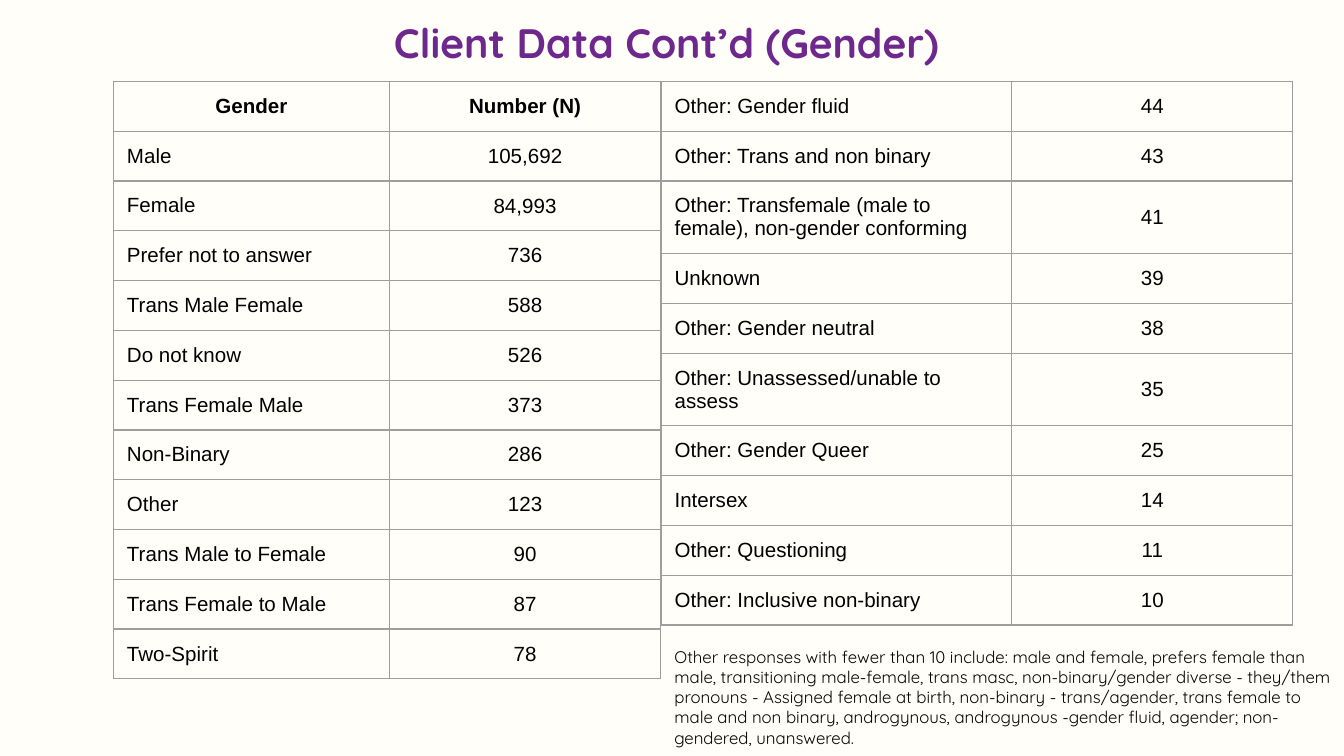
from lxml.etree import SubElement
from pptx import Presentation
from pptx.dml.color import RGBColor
from pptx.enum.text import MSO_ANCHOR, MSO_AUTO_SIZE, PP_ALIGN
from pptx.oxml.ns import qn
from pptx.util import Pt

TITLE = "Client Data Cont’d (Gender)"
HEADER = ("Gender", "Number (N)")
MAIN_ROWS = [
    HEADER,
    ("Male", "105,692"),
    ("Female", "84,993"),
    ("Prefer not to answer", "736"),
    ("Trans Male Female", "588"),
    ("Do not know", "526"),
    ("Trans Female Male", "373"),
    ("Non-Binary", "286"),
    ("Other", "123"),
    ("Trans Male to Female", "90"),
    ("Trans Female to Male", "87"),
    ("Two-Spirit", "78"),
]
OTHER_ROWS = [
    ("Other: Gender fluid", "44"),
    ("Other: Trans and non binary", "43"),
    ("Other: Transfemale (male to female), non-gender conforming", "41"),
    ("Unknown", "39"),
    ("Other: Gender neutral", "38"),
    ("Other: Unassessed/unable to assess", "35"),
    ("Other: Gender Queer", "25"),
    ("Intersex", "14"),
    ("Other: Questioning", "11"),
    ("Other: Inclusive non-binary", "10"),
]
NOTE = (
    "Other responses with fewer than 10 include: male and female, prefers female than male, "
    "transitioning male-female, trans masc, non-binary/gender diverse - they/them pronouns - "
    "Assigned female at birth, non-binary - trans/agender, trans female to male and non binary, "
    "androgynous, androgynous -gender fluid, agender; non-gendered, unanswered."
)

COLORS = {
    "background": "FFFEF9",
    "title": "6E288D",
    "cell": "000000",
    "note": "080404",
    "border": "9E9E9E",
}
INSET = Pt(7.2)
TABLE_TOP = 43.6
RIGHT_LEFT = 354.2


def set_insets(box):
    box.margin_left = box.margin_right = box.margin_top = box.margin_bottom = INSET


def format_text(text_frame, size, font_name, color, bold=False, alignment=PP_ALIGN.LEFT):
    for paragraph in text_frame.paragraphs:
        paragraph.alignment = alignment
        for run in paragraph.runs:
            run.font.size = Pt(size)
            run.font.name = font_name
            run.font.bold = bold
            run.font.color.rgb = RGBColor.from_string(COLORS[color])


def add_borders(cell):
    """Draw the four cell edges; they must precede the fill in the XML."""
    properties = cell._tc.get_or_add_tcPr()
    for side in ("lnL", "lnR", "lnT", "lnB"):
        line = SubElement(properties, qn(f"a:{side}"), w=str(Pt(0.75)))
        fill = SubElement(line, qn("a:solidFill"))
        SubElement(fill, qn("a:srgbClr"), val=COLORS["border"])


def add_gender_table(slide, rows, left, column_widths, row_height):
    """Add a label and count table; rows grow to fit their text."""
    frame = slide.shapes.add_table(
        len(rows), len(column_widths), Pt(left), Pt(TABLE_TOP),
        Pt(sum(column_widths)), Pt(row_height * len(rows)))
    table = frame.table
    table.first_row = rows[0] == HEADER
    table.horz_banding = False
    for column, width in zip(table.columns, column_widths):
        column.width = Pt(width)
    for row, values in zip(table.rows, rows):
        row.height = Pt(row_height)
        is_header = values == HEADER
        for index, (cell, value) in enumerate(zip(row.cells, values)):
            centered = is_header or index == 1
            cell.text_frame.text = value
            set_insets(cell)
            cell.vertical_anchor = MSO_ANCHOR.MIDDLE if index == 1 and not is_header else MSO_ANCHOR.TOP
            add_borders(cell)
            cell.fill.background()
            format_text(cell.text_frame, 11, "Arial", "cell", is_header,
                        PP_ALIGN.CENTER if centered else PP_ALIGN.LEFT)


def fill_text_box(shape, text, anchor):
    text_frame = shape.text_frame
    text_frame.text = text
    text_frame.word_wrap = True
    text_frame.auto_size = MSO_AUTO_SIZE.NONE
    text_frame.vertical_anchor = anchor
    set_insets(text_frame)
    return text_frame


def main():
    presentation = Presentation()
    presentation.slide_width, presentation.slide_height = Pt(720), Pt(405)
    slide = presentation.slides.add_slide(presentation.slide_layouts[5])
    slide.background.fill.solid()
    slide.background.fill.fore_color.rgb = RGBColor.from_string(COLORS["background"])

    add_gender_table(slide, MAIN_ROWS, 60.8, (147.8, 145.4), 22.3)

    title = slide.shapes.title
    title.left, title.top, title.width, title.height = Pt(203.8), Pt(7.2), Pt(313.2), Pt(30.2)
    format_text(fill_text_box(title, TITLE, MSO_ANCHOR.MIDDLE), 22, "Quicksand", "title", bold=True)

    note = slide.shapes.add_textbox(Pt(RIGHT_LEFT), Pt(339.1), Pt(365.8), Pt(49))
    format_text(fill_text_box(note, NOTE, MSO_ANCHOR.TOP), 9, "Quicksand", "note")

    add_gender_table(slide, OTHER_ROWS, RIGHT_LEFT, (187.9, 150.5), 24.5)
    presentation.save("out.pptx")


if __name__ == "__main__":
    main()
